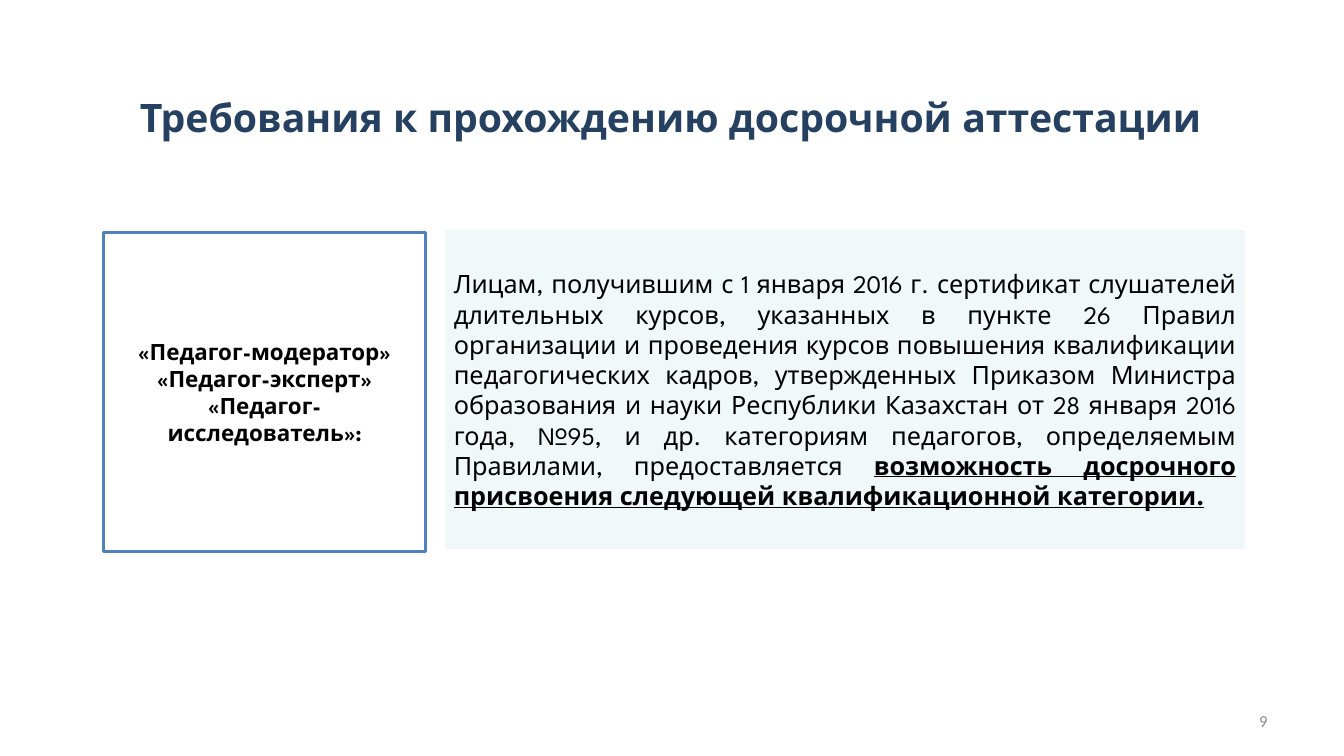
from dataclasses import dataclass

from lxml.etree import SubElement
from pptx import Presentation
from pptx.dml.color import RGBColor as Rgb
from pptx.enum.shapes import MSO_SHAPE as Kind
from pptx.enum.text import MSO_ANCHOR as Anchor, MSO_AUTO_SIZE as Fit, PP_ALIGN as Align
from pptx.oxml.ns import qn
from pptx.util import Inches, Pt

WIDE, HIGH = Inches(13.33), Inches(7.5)
HEAD_FONT, PAGE_FONT = "League Spartan", "Calibri"
COLORS = {
    "navy": "254061",
    "ink": "000000",
    "gray": "8C8C8C",
    "white": "FFFFFF",
    "mist": "F0F8FA",
    "blue": "4F81BD",
}


@dataclass
class Area:
    """Place and size in percent of the slide's width and height."""
    left: float
    top: float
    width: float
    height: float

    def box(self) -> tuple[int, int, int, int]:
        return (int(WIDE * self.left / 100), int(HIGH * self.top / 100),
                int(WIDE * self.width / 100), int(HIGH * self.height / 100))


@dataclass
class Style:
    size: int
    color: str
    align: Align
    bold: bool = False
    font: str = HEAD_FONT


def tint(name: str) -> Rgb:
    return Rgb.from_string(COLORS[name])


def place(shape, area: Area) -> None:
    shape.left, shape.top, shape.width, shape.height = area.box()


def paint(shape, fill: str, line: str) -> None:
    shape.fill.solid()
    shape.fill.fore_color.rgb = tint(fill)
    shape.line.color.rgb = tint(line)
    shape.line.width = Pt(2)


def write(shape, text: str, style: Style, stress: str = "") -> None:
    """Set the text; stress is added at the end, bold and underlined."""
    frame = shape.text_frame
    frame.text = text
    frame.word_wrap = True
    frame.auto_size = Fit.NONE
    frame.vertical_anchor = Anchor.MIDDLE
    if stress:
        run = frame.paragraphs[-1].add_run()
        run.text = stress
        run.font.underline = True
    for para in frame.paragraphs:
        para.alignment = style.align
        for run in para.runs:
            font = run.font
            font.name, font.size = style.font, Pt(style.size)
            font.bold = style.bold or bool(font.underline)
            font.color.rgb = tint(style.color)


def unbullet(para) -> None:
    props = para._p.get_or_add_pPr()
    props.set("marL", "0")
    props.set("indent", "0")
    SubElement(props, qn("a:buNone"))


def main() -> None:
    deck = Presentation()
    deck.slide_width, deck.slide_height = WIDE, HIGH
    slide = deck.slides.add_slide(deck.slide_layouts[1])
    title, rule = slide.placeholders

    place(title, Area(4.88, 12.8, 90.02, 5.2))
    write(title, "Требования к прохождению досрочной аттестации",
          Style(28, "navy", Align.CENTER, bold=True))

    place(rule, Area(33.01, 30.27, 59.72, 42.53))
    paint(rule, "mist", "white")
    write(rule,
          "Лицам, получившим с 1 января 2016 г. сертификат слушателей "
          "длительных курсов, указанных в пункте 26 Правил организации и "
          "проведения курсов повышения квалификации педагогических кадров, "
          "утвержденных Приказом Министра образования и науки Республики "
          "Казахстан от 28 января 2016 года, №95, и др. категориям педагогов, "
          "определяемым Правилами, предоставляется ",
          Style(18, "ink", Align.JUSTIFY),
          stress="возможность досрочного присвоения следующей "
                 "квалификационной категории.")
    unbullet(rule.text_frame.paragraphs[0])

    page = slide.shapes.add_textbox(*Area(71.72, 92.67, 23.33, 5.33).box())
    write(page, "9", Style(12, "gray", Align.RIGHT, font=PAGE_FONT))

    ranks = slide.shapes.add_shape(Kind.RECTANGLE, *Area(7.73, 30.8, 23.93, 42.13).box())
    ranks.shadow.inherit = False
    paint(ranks, "white", "blue")
    write(ranks,
          "«Педагог-модератор»\n«Педагог-эксперт»\n«Педагог-исследователь»:",
          Style(16, "ink", Align.CENTER, bold=True))

    deck.save("out.pptx")


if __name__ == "__main__":
    main()
